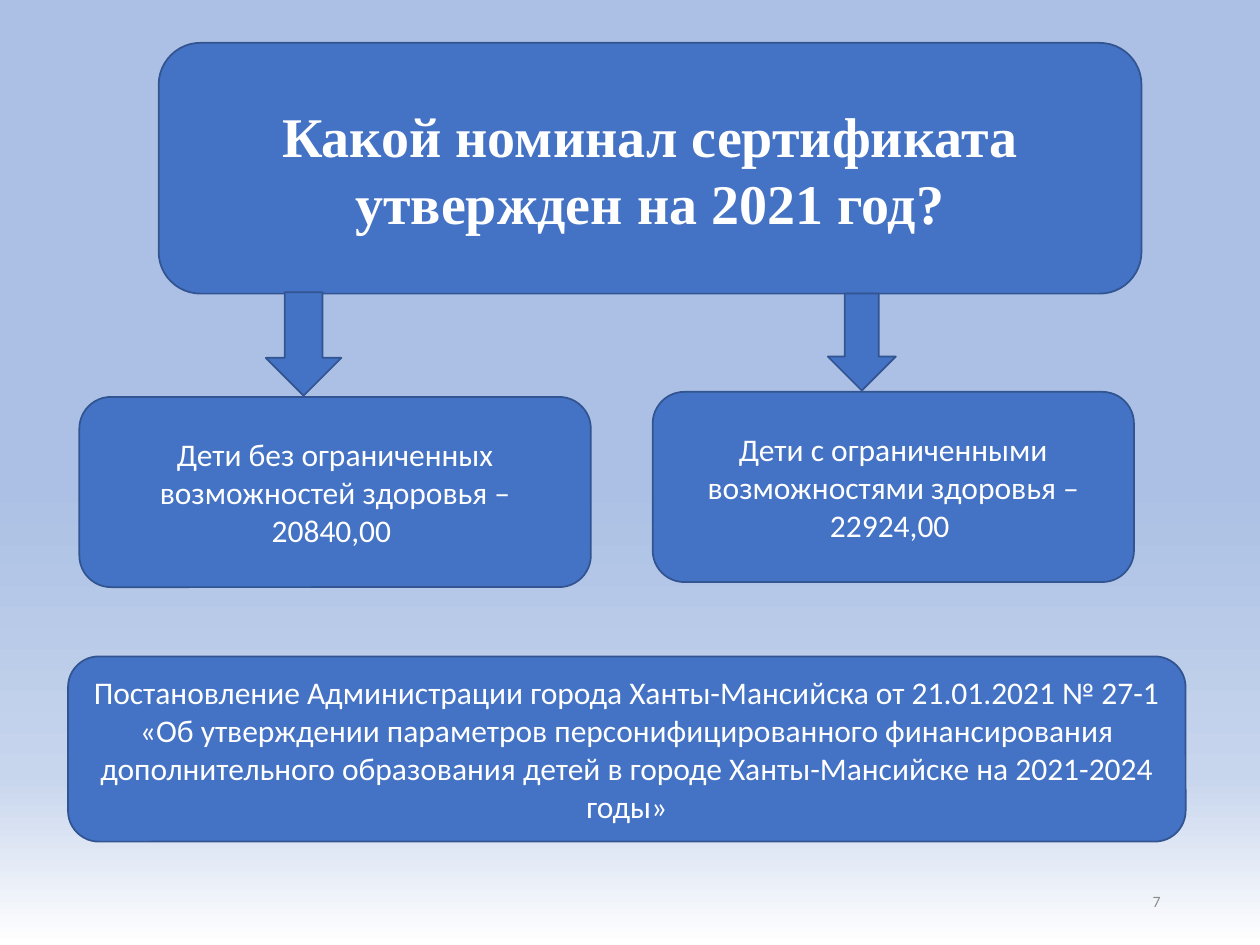
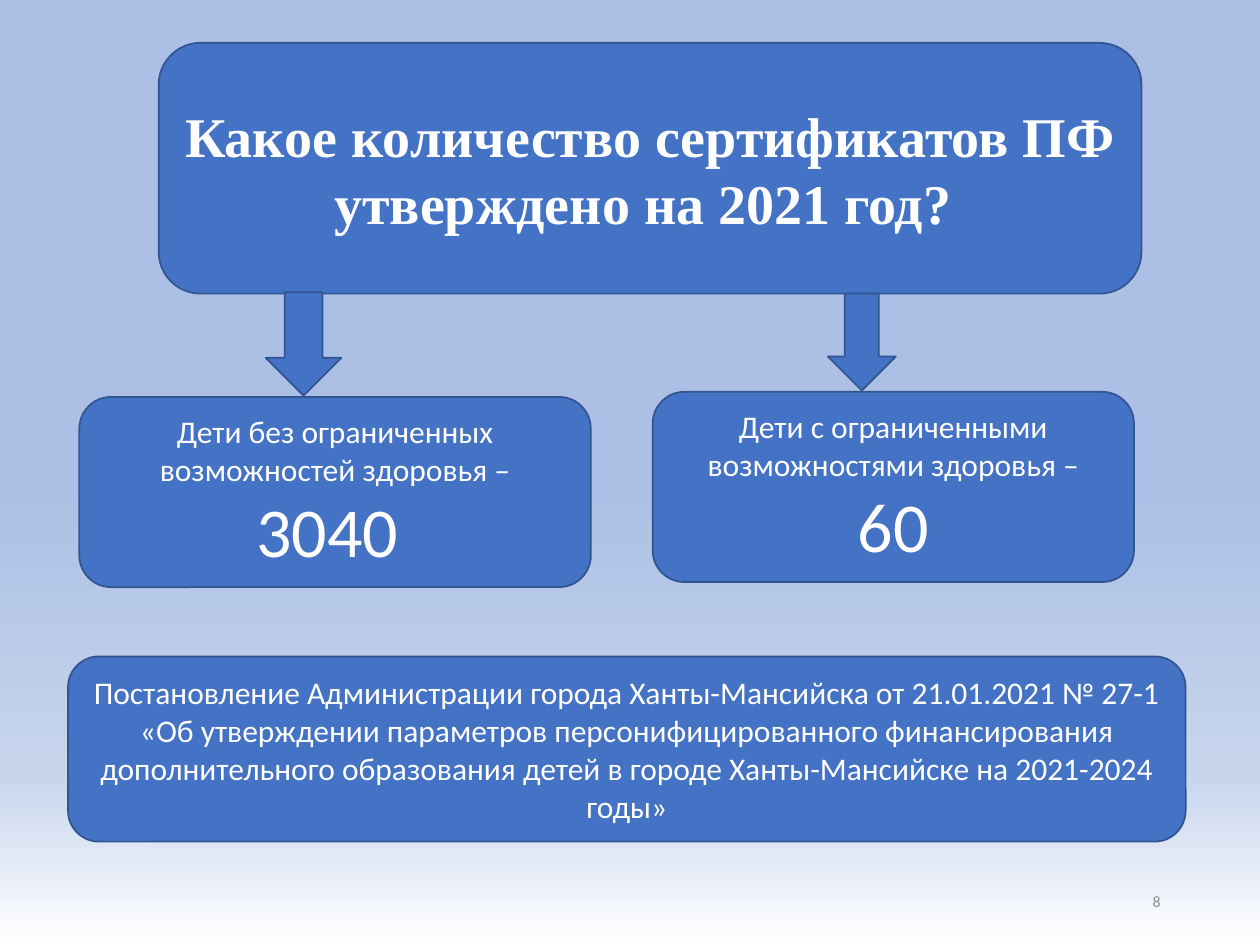
from lxml import etree
from pptx import Presentation
from pptx.dml.color import RGBColor
from pptx.enum.shapes import MSO_SHAPE
from pptx.enum.text import MSO_ANCHOR, PP_ALIGN
from pptx.oxml.ns import qn
from pptx.util import Pt

ROUNDED = MSO_SHAPE.ROUNDED_RECTANGLE
DOWN_ARROW = MSO_SHAPE.DOWN_ARROW
MIDDLE = MSO_ANCHOR.MIDDLE
CENTER, RIGHT = PP_ALIGN.CENTER, PP_ALIGN.RIGHT

EMU_PER_PX = 9144
BLANK_LAYOUT = 6
BLUE, OUTLINE, WHITE, GRAY = "4472C4", "325491", "FFFFFF", "8C8C8C"
BACKDROP = [(51, "ABC0E4"), (82, "C7D5ED"), (100, WHITE)]
BODY_FONT, TITLE_FONT = "Calibri", "Times New Roman"

TITLE_BOX = (126, 34, 780, 199)
GROUPS = [
    ("Дети без ограниченных возможностей здоровья –",
     (63, 315, 406, 151), (211, 232, 60, 82)),
    ("Дети с ограниченными возможностями здоровья –",
     (518, 311, 382, 151), (657, 233, 54, 77)),
]
DECREE_BOX = (54, 521, 887, 147)
DECREE = (
    "Постановление Администрации города Ханты-Мансийска от 21.01.2021 № 27-1 "
    "«Об утверждении параметров персонифицированного финансирования "
    "дополнительного образования детей в городе Ханты-Мансийске на 2021-2024 годы»"
)
NUMBER_BOX = (706, 695, 225, 40)

QUESTIONS = [
    (7, ["Какой номинал сертификата утвержден на 2021 год?"],
     ["20840,00 ", "22924,00 "], 18),
    (8, ["Какое количество сертификатов ПФ ", "утверждено на 2021 год? "],
     ["3040 ", "60"], 40),
]


def px(*lengths):
    return [length * EMU_PER_PX for length in lengths]


def color(hex_code):
    return RGBColor.from_string(hex_code)


class SlideBuilder:
    def __init__(self):
        self.deck = Presentation()
        self.deck.slide_width, self.deck.slide_height = px(1000, 750)
        self.page = None
        self.paint_backdrop()

    def paint_backdrop(self):
        master = self.deck.slide_master
        master.background.fill.gradient()
        gradient = master.element.xpath("p:cSld/p:bg/p:bgPr/a:gradFill")[0]
        for child in list(gradient):
            gradient.remove(child)
        stops = etree.SubElement(gradient, qn("a:gsLst"))
        for percent, hex_code in BACKDROP:
            stop = etree.SubElement(stops, qn("a:gs"), pos=str(percent * 1000))
            etree.SubElement(stop, qn("a:srgbClr"), val=hex_code)
        etree.SubElement(gradient, qn("a:lin"), ang="5400000", scaled="0")

    def new_page(self):
        layout = self.deck.slide_layouts[BLANK_LAYOUT]
        self.page = self.deck.slides.add_slide(layout)

    def add_lines(self, box, lines, font=BODY_FONT, hex_code=WHITE, bold=False, align=CENTER):
        frame = box.text_frame
        frame.word_wrap = True
        frame.vertical_anchor = MIDDLE
        for index, (text, size) in enumerate(lines):
            para = frame.add_paragraph() if index else frame.paragraphs[0]
            para.alignment = align
            span = para.add_run()
            span.text = text
            span.font.name = font
            span.font.size = Pt(size)
            span.font.bold = bold
            span.font.color.rgb = color(hex_code)

    def shape(self, kind, place):
        box = self.page.shapes.add_shape(kind, *px(*place))
        box.shadow.inherit = False
        box.fill.solid()
        box.fill.fore_color.rgb = color(BLUE)
        box.line.color.rgb = color(OUTLINE)
        box.line.width = Pt(1)
        return box

    def panel(self, place, lines, **style):
        self.add_lines(self.shape(ROUNDED, place), lines, **style)

    def arrow(self, place):
        self.shape(DOWN_ARROW, place)

    def page_number(self, number):
        box = self.page.shapes.add_textbox(*px(*NUMBER_BOX))
        self.add_lines(box, [(str(number), 9)], hex_code=GRAY, align=RIGHT)


def main():
    builder = SlideBuilder()
    for number, question, answers, answer_size in QUESTIONS:
        builder.new_page()
        builder.page_number(number)
        builder.panel(TITLE_BOX, [(line, 32) for line in question],
                      font=TITLE_FONT, bold=True)
        for (group, group_box, _), answer in zip(GROUPS, answers):
            builder.panel(group_box, [(group, 18), (answer, answer_size)])
        for _, _, arrow_place in GROUPS:
            builder.arrow(arrow_place)
        builder.panel(DECREE_BOX, [(DECREE, 18)])
    builder.deck.save("out.pptx")


if __name__ == "__main__":
    main()
